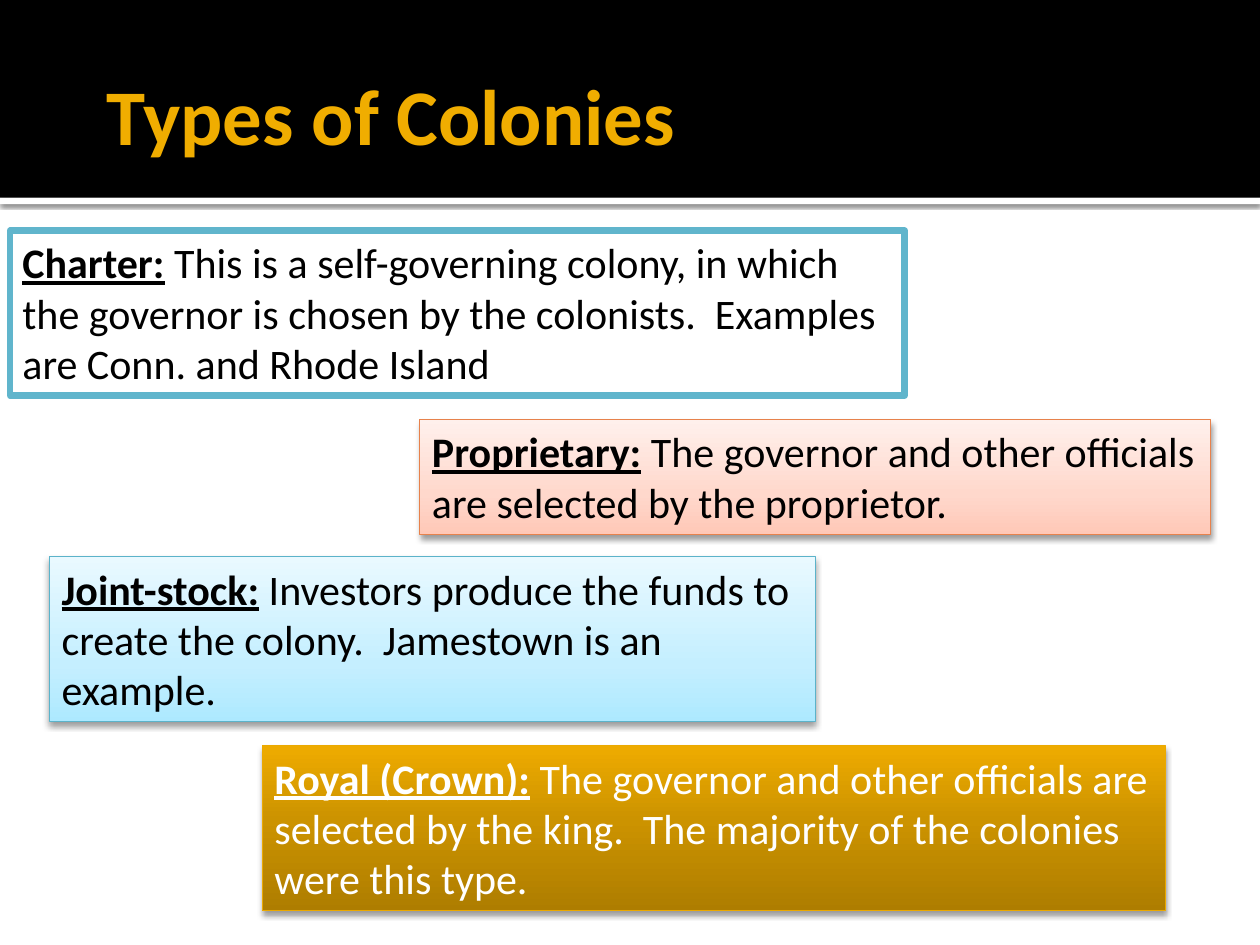
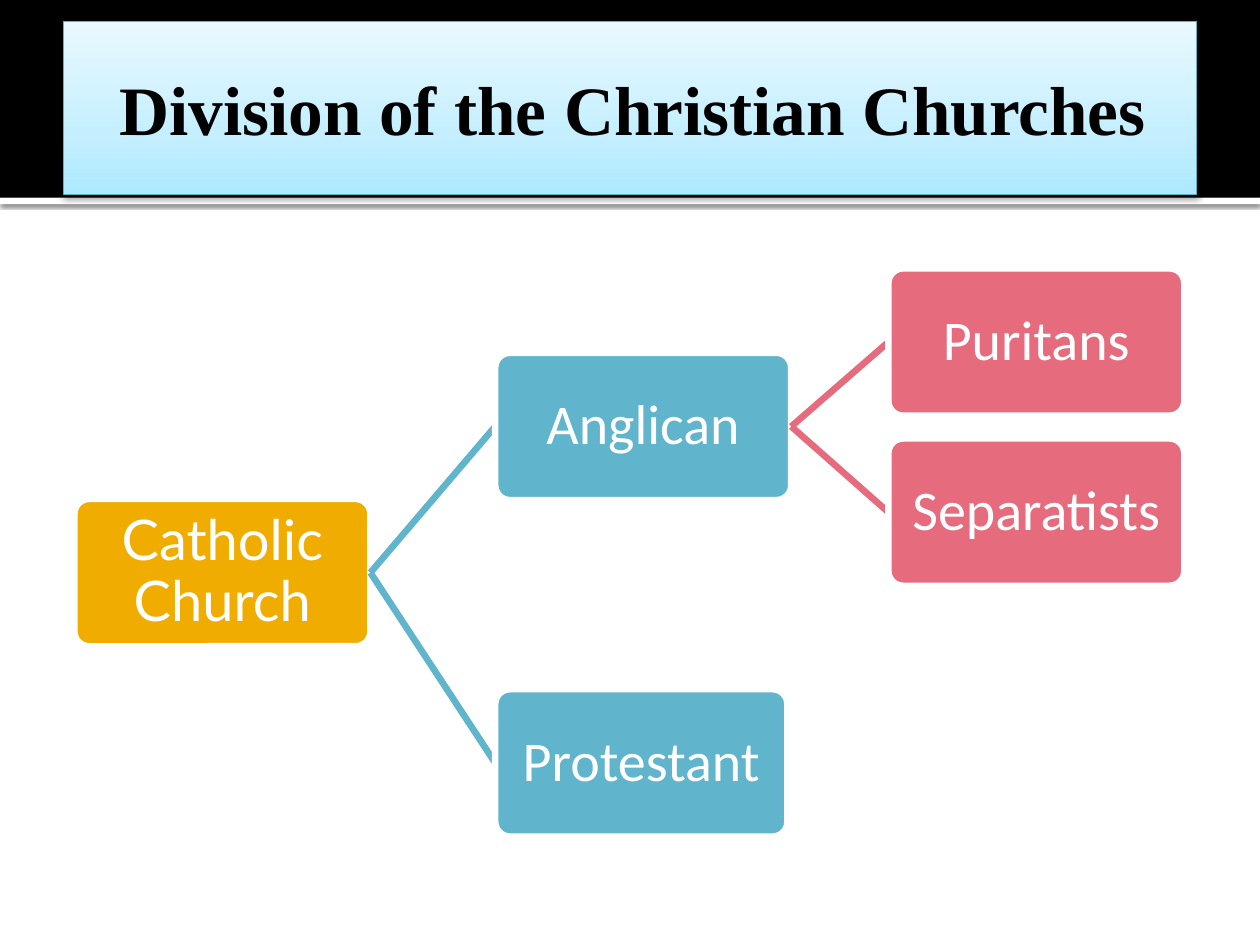
"""Builds two slides: the types of colonies and the division of the churches."""
import copy
from dataclasses import dataclass

import pptx
import pptx.dml.color
import pptx.enum.shapes
import pptx.enum.text
import pptx.oxml
import pptx.oxml.ns
import pptx.util

Inches = pptx.util.Inches
Pt = pptx.util.Pt
SHAPE = pptx.enum.shapes.MSO_SHAPE
ALIGN = pptx.enum.text.PP_ALIGN
ANCHOR = pptx.enum.text.MSO_ANCHOR
qn = pptx.oxml.ns.qn


@dataclass(frozen=True)
class Theme:
    black: str = "000000"
    white: str = "FFFFFF"
    gold: str = "F0AD00"
    blue: str = "60B5CC"
    rose: str = "E66C7D"
    sky: tuple = ((0, "ADE9FF"), (0.35, "C5EFFF"), (1, "E9F9FF"))
    peach: tuple = ((0, "FFC8B7"), (0.35, "FFD8CC"), (1, "FFF0EC"))
    amber: tuple = ((0, "AE7D00"), (0.55, "CC9300"), (1, "EEAB00"))
    sky_edge: str = "5BB3CA"
    peach_edge: str = "E7824C"
    amber_edge: str = "EBA900"
    sans: str = "Calibri"
    serif: str = "Times New Roman"
    label: str = "Lato"
    title: float = 45
    banner: float = 39.6
    body: float = 24
    node: float = 32
    thin: float = 0.5
    thick: float = 3.78
    soft: tuple = (38, 3.5, 2)
    tight: tuple = (38, 3.1, 2)
    rule: tuple = (60, 2.5, 0.8)


def rgb(code):
    return pptx.dml.color.RGBColor.from_string(code)


class Deck:
    def __init__(self, theme):
        self.theme = theme
        self.show = pptx.Presentation()
        self.show.slide_width = Inches(10)
        self.show.slide_height = Inches(7.5)
        self.slide = None

    def page(self):
        t = self.theme
        self.slide = self.show.slides.add_slide(self.show.slide_layouts[6])
        self.box((0, 1.57, 10, 0.05), t.white, shade=t.rule)
        self.box((0, 0, 10, 1.57), t.black)

    def box(self, area, fill, edge=None, width=0, shade=None, kind=SHAPE.RECTANGLE):
        shape = self.slide.shapes.add_shape(kind, *map(Inches, area))
        shape.shadow.inherit = False
        if isinstance(fill, str):
            shape.fill.solid()
            shape.fill.fore_color.rgb = rgb(fill)
        else:
            self.blend(shape, fill)
        if edge:
            shape.line.color.rgb = rgb(edge)
            shape.line.width = Pt(width)
        else:
            shape.line.fill.background()
        if shade:
            self.shade(shape, *shade)
        return shape

    def blend(self, shape, stops):
        shape.fill.gradient()
        shape.fill.gradient_angle = 90
        items = shape.element.spPr.find(".//" + qn("a:gsLst"))
        items.insert(1, copy.deepcopy(items[0]))
        for stop, (place, code) in zip(shape.fill.gradient_stops, stops):
            stop.position = place
            stop.color.rgb = rgb(code)

    def shade(self, shape, alpha, blur, gap):
        shape.element.spPr.find(qn("a:effectLst")).append(pptx.oxml.parse_xml(
            f'<a:outerShdw {pptx.oxml.ns.nsdecls("a")} blurRad="{Pt(blur)}" '
            f'dist="{Pt(gap)}" dir="5400000" algn="t" rotWithShape="0">'
            f'<a:srgbClr val="{self.theme.black}"><a:alpha val="{alpha * 1000}"/>'
            '</a:srgbClr></a:outerShdw>'))

    def label(self, shape, parts, size, color, font, align=ALIGN.LEFT,
              anchor=ANCHOR.MIDDLE, pad=(0.1, 0.05, 0.05, 0.05)):
        frame = shape.text_frame
        frame.word_wrap = True
        frame.vertical_anchor = anchor
        (frame.margin_left, frame.margin_top,
         frame.margin_right, frame.margin_bottom) = map(Inches, pad)
        para = frame.paragraphs[0]
        para.alignment = align
        for text, bold, under in parts:
            run = para.add_run()
            run.text = text
            run.font.name = font
            run.font.size = Pt(size)
            run.font.color.rgb = rgb(color)
            run.font.bold = bold
            run.font.underline = under
        return para

    def title(self, text):
        t = self.theme
        frame = self.slide.shapes.add_textbox(*map(Inches, (0.75, 0.33, 8.48, 1.15)))
        self.label(frame, [(text, True, False)], t.title, t.gold, t.sans)

    def banner(self, text):
        t = self.theme
        shape = self.box((0.5, 0.17, 9, 1.37), t.sky, t.sky_edge, t.thin, t.soft)
        self.label(shape, [(text, True, False)], t.banner, t.black, t.serif, ALIGN.CENTER)

    def card(self, area, term, text, fill, edge, width, shade, color):
        t = self.theme
        shape = self.box(area, fill, edge, width, shade)
        self.label(shape, [(term, True, True), (" " + text, False, False)], t.body,
                   color, t.sans, anchor=ANCHOR.TOP, pad=(0.1, 0.05, 0.1, 0.05))

    def node(self, text, left, top, fill, width=2.35, font=None, root=None):
        t = self.theme
        shape = self.box((left, top, width, 1.17), fill, t.white, t.thick,
                         kind=SHAPE.ROUNDED_RECTANGLE)
        shape.adjustments[0] = 0.1
        para = self.label(shape, [(text, False, False)], t.node, t.white,
                          font or t.sans, ALIGN.CENTER, pad=(0.02,) * 4)
        para.line_spacing = 0.9
        if root is not None:
            self.join(root, shape, fill)
        return shape

    def join(self, root, leaf, color):
        line = self.slide.shapes.add_connector(
            pptx.enum.shapes.MSO_CONNECTOR.STRAIGHT, 0, 0, 0, 0)
        line.begin_connect(root, 3)
        line.end_connect(leaf, 1)
        line.line.color.rgb = rgb(color)
        line.line.width = Pt(self.theme.thick)
        line.element.spPr.append(pptx.oxml.parse_xml(
            f'<a:effectLst {pptx.oxml.ns.nsdecls("a")}/>'))
        leaf.element.addprevious(line.element)


def main():
    t = Theme()
    deck = Deck(t)

    deck.page()
    deck.title("Types of Colonies")
    deck.card((0.08, 1.83, 7.1, 1.31), "Charter:",
              "This is a self-governing colony, in which the governor is chosen "
              "by the colonists.  Examples are Conn. and Rhode Island",
              t.white, t.blue, t.thick, None, t.black)
    deck.card((3.33, 3.33, 6.28, 0.91), "Proprietary:",
              "The governor and other officials are selected by the proprietor.",
              t.peach, t.peach_edge, t.thin, t.soft, t.black)
    deck.card((0.39, 4.42, 6.08, 1.31), "Joint-stock:",
              "Investors produce the funds to create the colony.  "
              "Jamestown is an example.",
              t.sky, t.sky_edge, t.thin, t.soft, t.black)
    deck.card((2.08, 5.92, 7.17, 1.31), "Royal (Crown):",
              "The governor and other officials are selected by the king.  "
              "The majority of the colonies were this type.",
              t.amber, t.amber_edge, t.thin, t.tight, t.white)

    deck.page()
    deck.banner("Division of the Christian Churches")
    first, second, third = 0.59, 3.93, 7.05
    church = deck.node("Catholic Church", first, 3.96, t.gold, font=t.label)
    crown = deck.node("Anglican", second, 2.8, t.blue, root=church)
    deck.node("Puritans", third, 2.13, t.rose, root=crown)
    deck.node("Separatists", third, 3.48, t.rose, root=crown)
    deck.node("Protestant", second, 5.47, t.blue, width=2.32, root=church)

    deck.show.save("out.pptx")


if __name__ == "__main__":
    main()
